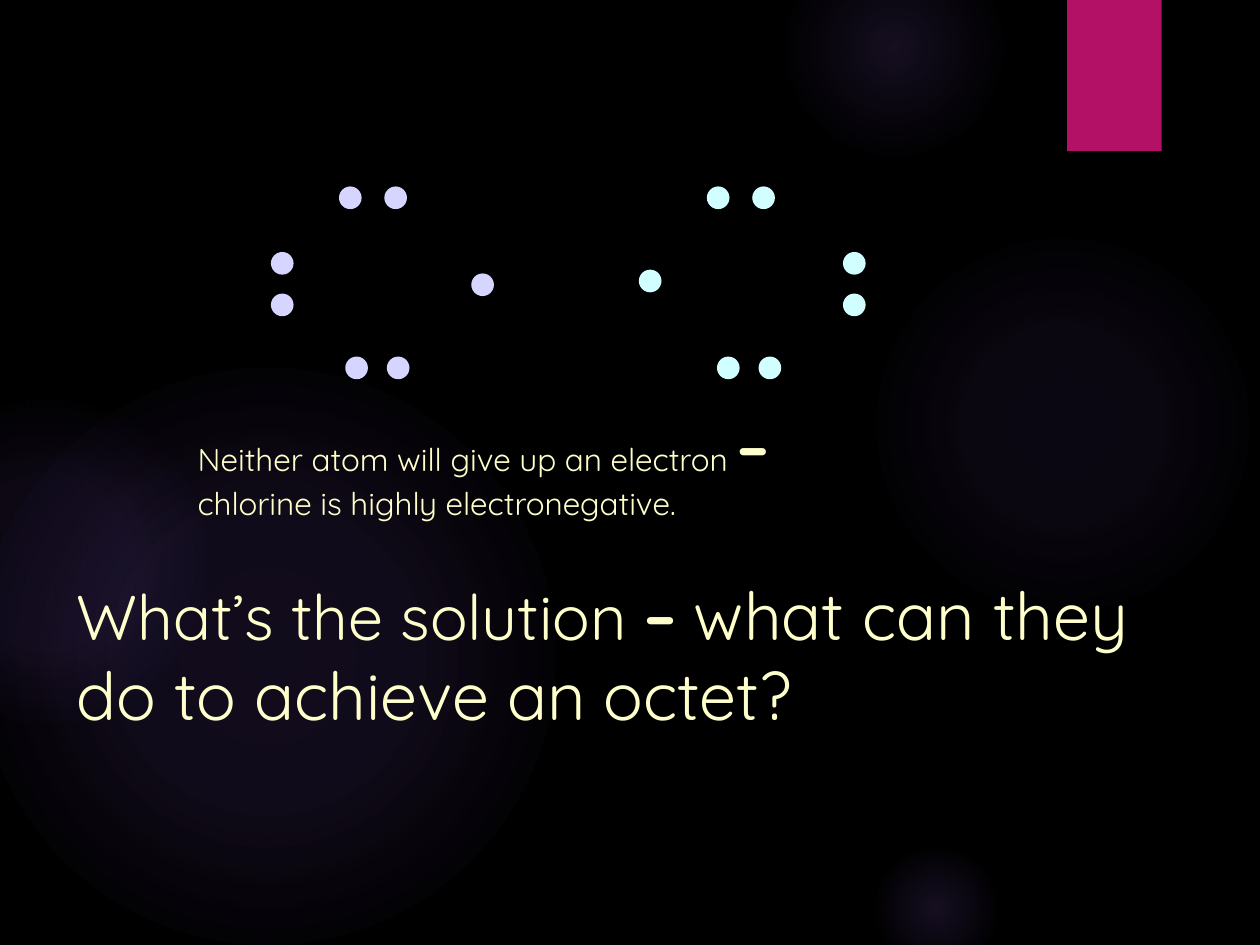
from lxml.etree import SubElement
from pptx import Presentation
from pptx.dml.color import RGBColor
from pptx.enum.shapes import MSO_SHAPE as SHAPE
from pptx.oxml import parse_xml
from pptx.oxml.ns import nsdecls, qn
from pptx.util import Inches, Pt

BLACK = RGBColor(0x00, 0x00, 0x00)
GLOW = RGBColor(0x9B, 0x6B, 0xF2)
MAGENTA = RGBColor(0xB3, 0x11, 0x66)
CREAM = RGBColor(0xFF, 0xFF, 0xCC)
LILAC = RGBColor(0xD5, 0xD5, 0xFF)
AQUA = RGBColor(0xD1, 0xFF, 0xFF)
FONT = "Quicksand"
COLS, ROWS = 1000, 750
SLIDE_W, SLIDE_H = Inches(10), Inches(7.5)
DOT = 18

GLOWS = [
    ((689, 183, 308), ((0, 7), (36, 6), (69, 0))),
    ((622, -50, 175), ((0, 14), (36, 7), (73, 0))),
    ((689, 667, 108), ((0, 14), (36, 7), (66, 0))),
    ((-17, 292, 458), ((0, 11), (36, 10), (75, 0))),
    ((-92, 317, 258), ((0, 8), (36, 8), (72, 0))),
]


def grid(x, y, w, h):
    """Turn columns and rows into slide lengths."""
    cw, rh = SLIDE_W / COLS, SLIDE_H / ROWS
    return int(x * cw), int(y * rh), int(w * cw), int(h * rh)


def add_solid(s, kind, box, color):
    """Add a plain filled shape without an outline."""
    sp = s.shapes.add_shape(kind, *grid(*box))
    sp.shadow.inherit = False
    sp.fill.solid()
    sp.fill.fore_color.rgb = color
    sp.line.fill.background()
    return sp


def add_glow(s, box, stops):
    """Add a circle that fades out from its centre."""
    sp = add_solid(s, SHAPE.OVAL, box, GLOW)
    marks = "".join(
        f'<a:gs pos="{pos * 1000}"><a:srgbClr val="{GLOW}">'
        f'<a:alpha val="{alpha * 1000}"/></a:srgbClr></a:gs>'
        for pos, alpha in stops)
    grad = parse_xml(
        f'<a:gradFill {nsdecls("a")} rotWithShape="1"><a:gsLst>{marks}</a:gsLst>'
        '<a:path path="circle"><a:fillToRect l="50000" t="50000" r="50000" b="50000"/>'
        '</a:path></a:gradFill>')
    solid = sp._element.spPr.find(qn("a:solidFill"))
    solid.getparent().replace(solid, grad)


def add_tab(s, box):
    """Add the coloured tab with its soft shadow."""
    sp = add_solid(s, SHAPE.RECTANGLE, box, MAGENTA)
    effects = sp._element.spPr.find(qn("a:effectLst"))
    shadow = SubElement(effects, qn("a:outerShdw"), blurRad=str(Pt(3)),
                        dist=str(Pt(2)), dir="5400000", rotWithShape="0")
    color = SubElement(shadow, qn("a:srgbClr"), val=str(BLACK))
    SubElement(color, qn("a:alpha"), val="45000")


def add_text(s, box, paragraphs):
    """Add a text box from paragraphs of (text, size, bold) runs."""
    tf = s.shapes.add_textbox(*grid(*box)).text_frame
    tf.word_wrap = True
    for i, runs in enumerate(paragraphs):
        p = tf.add_paragraph() if i else tf.paragraphs[0]
        p.font.name = FONT
        p.font.color.rgb = CREAM
        for text, size, bold in runs:
            r = p.add_run()
            r.text = text
            r.font.size = Pt(size)
            r.font.bold = bold


def add_electrons(s, origin, color, pair_x, lone, bottom_x):
    """Add an atom's three electron pairs and its lone electron."""
    x, y = origin
    top = [(36, 15), (72, 15)]
    side = [(pair_x, 67), (pair_x, 100)]
    bottom = [(bottom_x, 150), (bottom_x + 33, 150)]
    for dx, dy in top + side + bottom + [lone]:
        add_solid(s, SHAPE.OVAL, (x + dx, y + dy, DOT, DOT), color)


def build_slide(prs):
    """Place the background, the two atoms and the captions."""
    s = prs.slides.add_slide(prs.slide_layouts[6])
    s.background.fill.solid()
    s.background.fill.fore_color.rgb = BLACK
    for (x, y, size), stops in GLOWS:
        add_glow(s, (x, y, size, size), stops)
    add_tab(s, (847, 0, 75, 120))
    add_electrons(s, (525, 133), AQUA, 144, (-DOT, 81), 44)
    add_electrons(s, (233, 133), LILAC, -DOT, (141, 84), 41)
    add_text(s, (147, 319, 720, 123), [
        [("Neither atom will give up an electron ", 18, False), ("–", 36, True)],
        [("chlorine is highly electronegative.", 18, False)],
    ])
    add_text(s, (51, 451, 870, 138), [
        [("What’s the solution ", 36, False), ("– ", 36, True),
         ("what can they do to achieve an octet?", 38, False)],
    ])


def main():
    """Build and save the presentation."""
    prs = Presentation()
    prs.slide_width, prs.slide_height = SLIDE_W, SLIDE_H
    build_slide(prs)
    prs.save("out.pptx")


if __name__ == "__main__":
    main()
